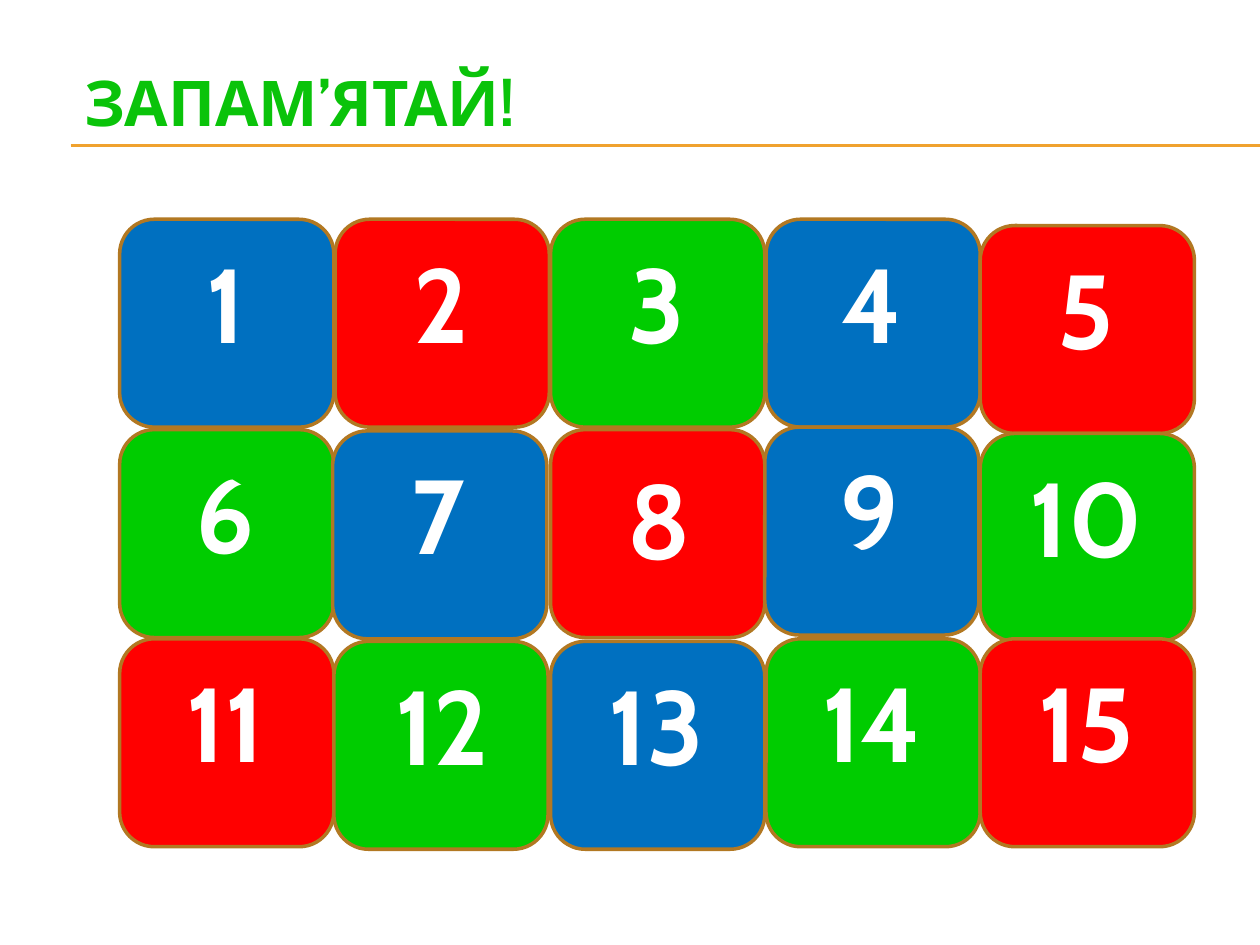
from lxml.etree import SubElement
from pptx import Presentation
from pptx.dml.color import RGBColor
from pptx.enum.shapes import MSO_CONNECTOR, MSO_SHAPE
from pptx.enum.text import MSO_ANCHOR, MSO_AUTO_SIZE, PP_ALIGN
from pptx.oxml.ns import qn
from pptx.util import Inches, Pt

FONT = "Cabin"
COLORS = {
    "blue": "0070C0",
    "red": "FF0000",
    "green": "00CC00",
    "border": "B27822",
    "rule": "F0A22E",
    "title": "0AC30A",
    "white": "FFFFFF",
}

TILE_W, TILE_H = 1.7, 1.65
LABEL_W, LABEL_H = 1.4, 1.37
LABEL_DX, LABEL_DY = 0.14, 0.1

# Hand-placed tiles, numbered in reading order: left, top, colour
TILES = [
    (0.95, 1.74, "blue"), (2.66, 1.74, "red"), (4.37, 1.74, "green"),
    (6.08, 1.74, "blue"), (7.78, 1.79, "red"),
    (0.95, 3.41, "green"), (2.64, 3.42, "blue"), (4.37, 3.41, "red"),
    (6.07, 3.39, "blue"), (7.78, 3.44, "green"),
    (0.95, 5.07, "red"), (2.65, 5.09, "green"), (4.37, 5.09, "blue"),
    (6.08, 5.07, "green"), (7.78, 5.07, "red"),
]
# Labels that sit a little off the usual place in their tile
LABEL_SHIFTS = {8: (0.02, 0.05), 12: (0.02, 0)}


def rgb(name):
    return RGBColor.from_string(COLORS[name])


def add_text(shapes, text, left, top, width, height, size, color):
    box = shapes.add_textbox(Inches(left), Inches(top), Inches(width), Inches(height))
    tf = box.text_frame
    tf.word_wrap = True
    p = tf.paragraphs[0]
    p.text = text
    p.font.name = FONT
    p.font.size = Pt(size)
    p.font.bold = True
    p.font.color.rgb = rgb(color)
    return tf


def add_rule(s, top):
    line = s.shapes.add_connector(
        MSO_CONNECTOR.STRAIGHT, Inches(0.56), Inches(top), Inches(10), Inches(top))
    line.line.color.rgb = rgb("rule")
    line.line.width = Pt(0.75)
    SubElement(line._element.spPr, qn("a:effectLst"))


def add_tile(s, number, left, top, color):
    group = s.shapes.add_group_shape()
    sp = group.shapes.add_shape(
        MSO_SHAPE.ROUNDED_RECTANGLE,
        Inches(left), Inches(top), Inches(TILE_W), Inches(TILE_H))
    sp.shadow.inherit = False
    sp.fill.solid()
    sp.fill.fore_color.rgb = rgb(color)
    sp.line.color.rgb = rgb("border")
    sp.line.width = Pt(2)

    dx, dy = LABEL_SHIFTS.get(number, (0, 0))
    tf = add_text(group.shapes, str(number), left + LABEL_DX + dx,
                  top + LABEL_DY + dy, LABEL_W, LABEL_H, 60, "white")
    tf.auto_size = MSO_AUTO_SIZE.SHAPE_TO_FIT_TEXT
    tf.paragraphs[0].alignment = PP_ALIGN.CENTER


def main():
    prs = Presentation()
    prs.slide_width, prs.slide_height = Inches(10), Inches(7.5)
    s = prs.slides.add_slide(prs.slide_layouts[6])

    # Heading over a double rule
    for top in (1.15, 1.16):
        add_rule(s, top)
    title = add_text(s.shapes, "ЗАПАМ’ЯТАЙ!", 0.57, 0.18, 9, 1.25, 36, "title")
    title.vertical_anchor = MSO_ANCHOR.MIDDLE

    # Numbered tiles
    for number, (left, top, color) in enumerate(TILES, start=1):
        add_tile(s, number, left, top, color)

    prs.save("out.pptx")


if __name__ == "__main__":
    main()
